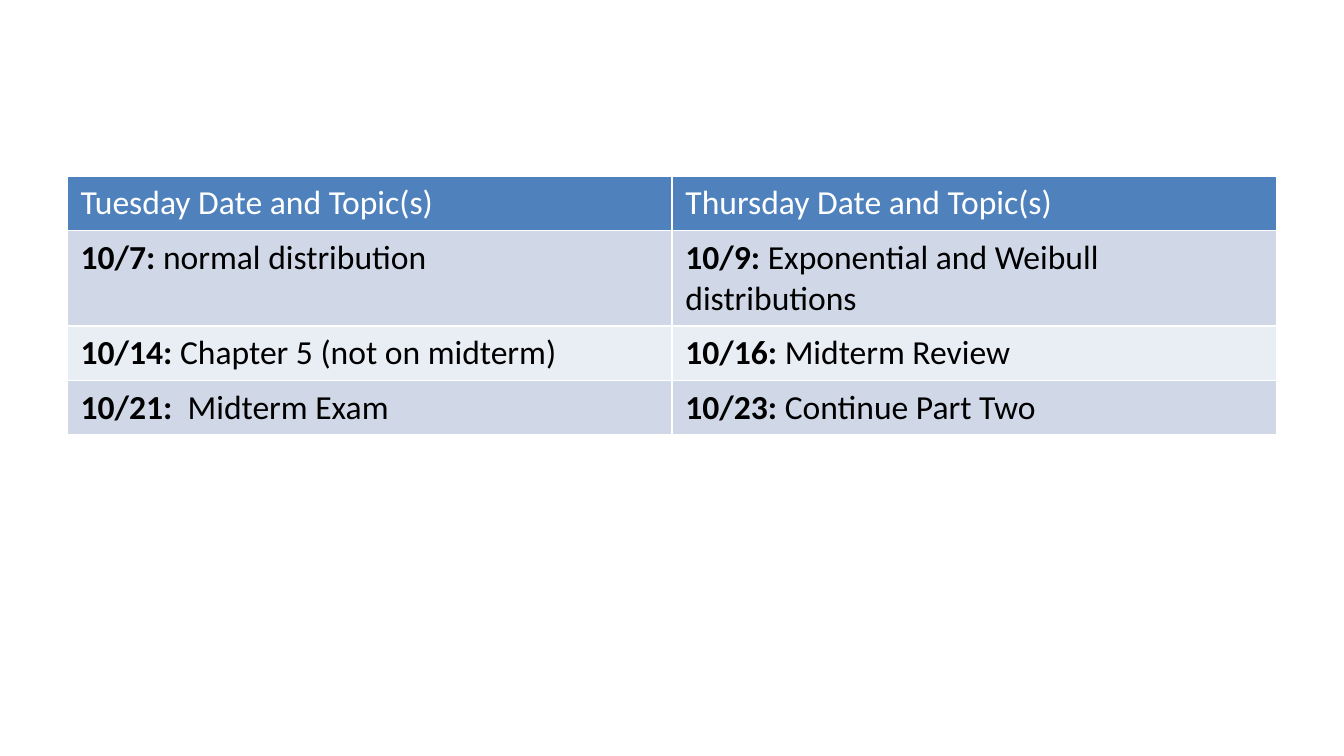
from lxml import etree
from pptx import Presentation
from pptx.dml.color import RGBColor
from pptx.oxml.ns import qn
from pptx.util import Inches, Pt

COLORS = {
    "header": "4F81BD",
    "odd": "D0D8E8",
    "even": "E9EDF4",
    "white": "FFFFFF",
    "black": "000000",
}

# Each cell is a pair: bold date, plain topic
ROWS = [
    [("", "Tuesday Date and Topic(s)"), ("", "Thursday Date and Topic(s)")],
    [("10/7:", " normal distribution"),
     ("10/9:", " Exponential and Weibull distributions")],
    [("10/14:", " Chapter 5 (not on midterm)"), ("10/16:", " Midterm Review")],
    [("10/21: ", " Midterm Exam"), ("10/23:", " Continue Part Two")],
]
HEIGHTS = [0.4, 0.71, 0.4, 0.4]


def set_border(cell, side):
    ln = etree.SubElement(cell._tc.get_or_add_tcPr(), qn(f"a:ln{side}"),
                          w=str(Pt(1)))
    fill = etree.SubElement(ln, qn("a:solidFill"))
    etree.SubElement(fill, qn("a:srgbClr"), val=COLORS["white"])


# 16:9 slide
prs = Presentation()
prs.slide_width = Inches(10)
prs.slide_height = Inches(10 * 9 / 16)
s = prs.slides.add_slide(prs.slide_layouts[6])

# Schedule table
table = s.shapes.add_table(len(ROWS), 2, Inches(0.5), Inches(1.31),
                           Inches(9), Inches(sum(HEIGHTS))).table
for col in table.columns:
    col.width = Inches(4.5)

for i, row in enumerate(ROWS):
    table.rows[i].height = Inches(HEIGHTS[i])
    band = "header" if i == 0 else "odd" if i % 2 else "even"
    text_color = "white" if i == 0 else "black"
    for j, (date, topic) in enumerate(row):
        cell = table.cell(i, j)

        # Borders and fill
        for side in "LRTB":
            set_border(cell, side)
        cell.fill.solid()
        cell.fill.fore_color.rgb = RGBColor.from_string(COLORS[band])

        # Date and topic
        p = cell.text_frame.paragraphs[0]
        for text, bold in ((date, True), (topic, False)):
            if text:
                r = p.add_run()
                r.text = text
                r.font.name = "Calibri"
                r.font.size = Pt(18)
                r.font.bold = bold
                r.font.color.rgb = RGBColor.from_string(COLORS[text_color])

prs.save("out.pptx")
